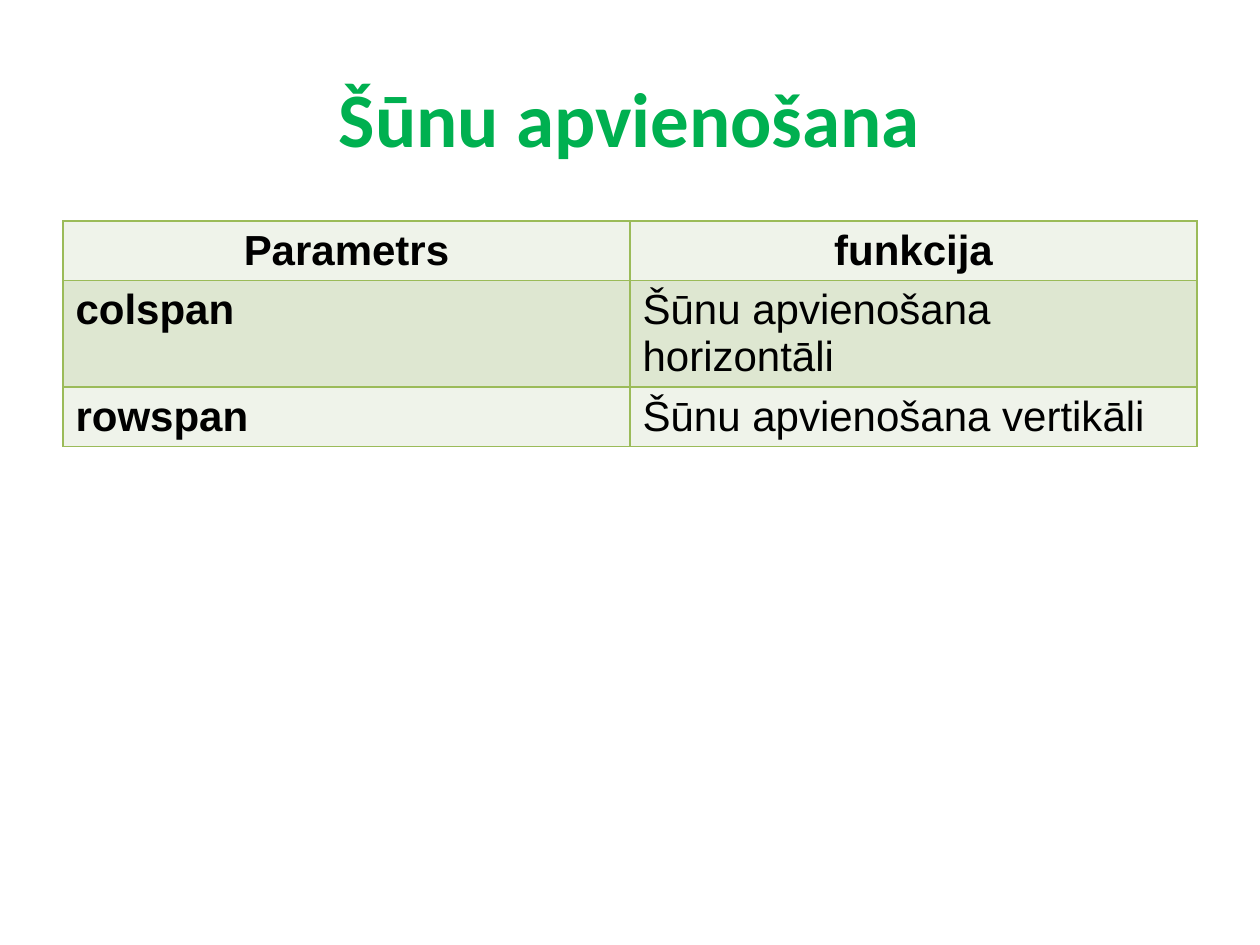
import pptx
import pptx.util
import pptx.dml.color
import pptx.enum.text
import pptx.oxml
import pptx.oxml.ns

SCALE = 914400 / 126  # EMU per px
HUES = {"title": "00B050", "text": "000000", "line": "9BBB59",
        "light": "EFF3EA", "dark": "DEE7D1"}
ALIGN = pptx.enum.text.PP_ALIGN
ANCHOR = pptx.enum.text.MSO_ANCHOR

ROWS = [
    ("Parametrs", "funkcija"),
    ("colspan", "Šūnu apvienošana horizontāli"),
    ("rowspan", "Šūnu apvienošana vertikāli"),
]


def px(count):
    return pptx.util.Emu(round(count * SCALE))


def hue(name):
    return pptx.dml.color.RGBColor.from_string(HUES[name])


def style(para, face, size, tint, bold, align):
    para.alignment = align
    font = para.font
    font.name = face
    font.size = pptx.util.Pt(size)
    font.bold = bold
    font.color.rgb = hue(tint)


def add_title(slide, text):
    title = slide.shapes.title
    title.left, title.top = px(63), px(38)
    title.width, title.height = px(1134), px(158)
    frame = title.text_frame
    frame.text = text
    frame.vertical_anchor = ANCHOR.MIDDLE
    style(frame.paragraphs[0], "Calibri", 44, "title", True, ALIGN.CENTER)


def add_edges(cell):
    # Borders go before the fill in the cell properties
    props = cell._tc.get_or_add_tcPr()
    for place, side in enumerate(("lnL", "lnR", "lnT", "lnB")):
        edge = pptx.oxml.parse_xml(
            f'<a:{side} {pptx.oxml.ns.nsdecls("a")} w="12700"><a:solidFill>'
            f'<a:srgbClr val="{HUES["line"]}"/></a:solidFill></a:{side}>')
        props.insert(place, edge)


def add_grid(slide, rows):
    high = 52
    frame = slide.shapes.add_table(len(rows), len(rows[0]), px(63), px(221),
                                   px(1134), px(high * len(rows)))
    grid = frame.table
    for r, row in enumerate(rows):
        grid.rows[r].height = px(high)
        for c, text in enumerate(row):
            cell = grid.cell(r, c)
            cell.text = text
            cell.fill.solid()
            cell.fill.fore_color.rgb = hue("dark" if r % 2 else "light")
            add_edges(cell)
            # Header row and first column are bold
            style(cell.text_frame.paragraphs[0], "Arial", 24, "text",
                  r == 0 or c == 0, ALIGN.LEFT if r else ALIGN.CENTER)


def main():
    deck = pptx.Presentation()
    deck.slide_width, deck.slide_height = px(1260), px(945)
    slide = deck.slides.add_slide(deck.slide_layouts[5])
    add_title(slide, "Šūnu apvienošana")
    add_grid(slide, ROWS)
    deck.save("out.pptx")


if __name__ == "__main__":
    main()
